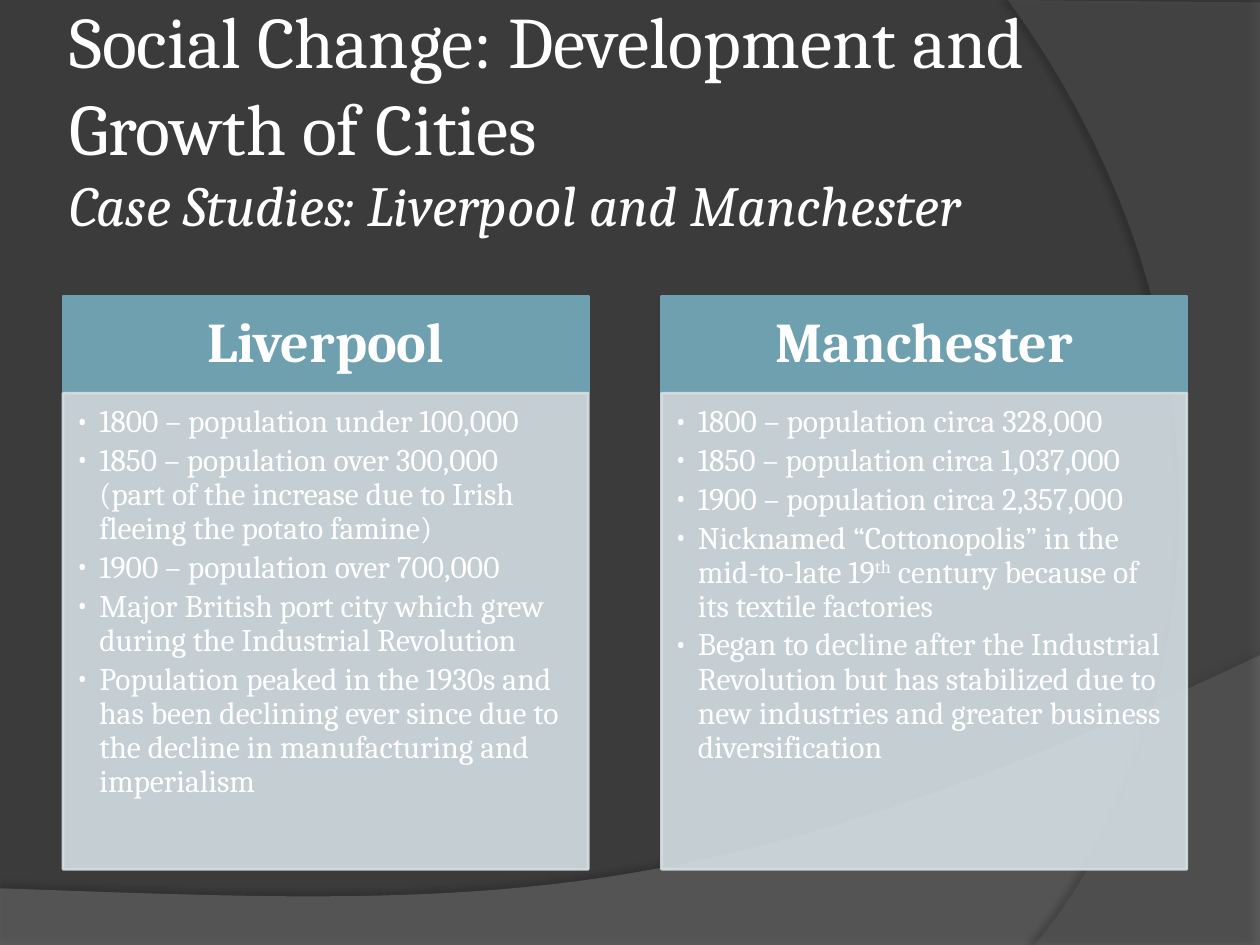
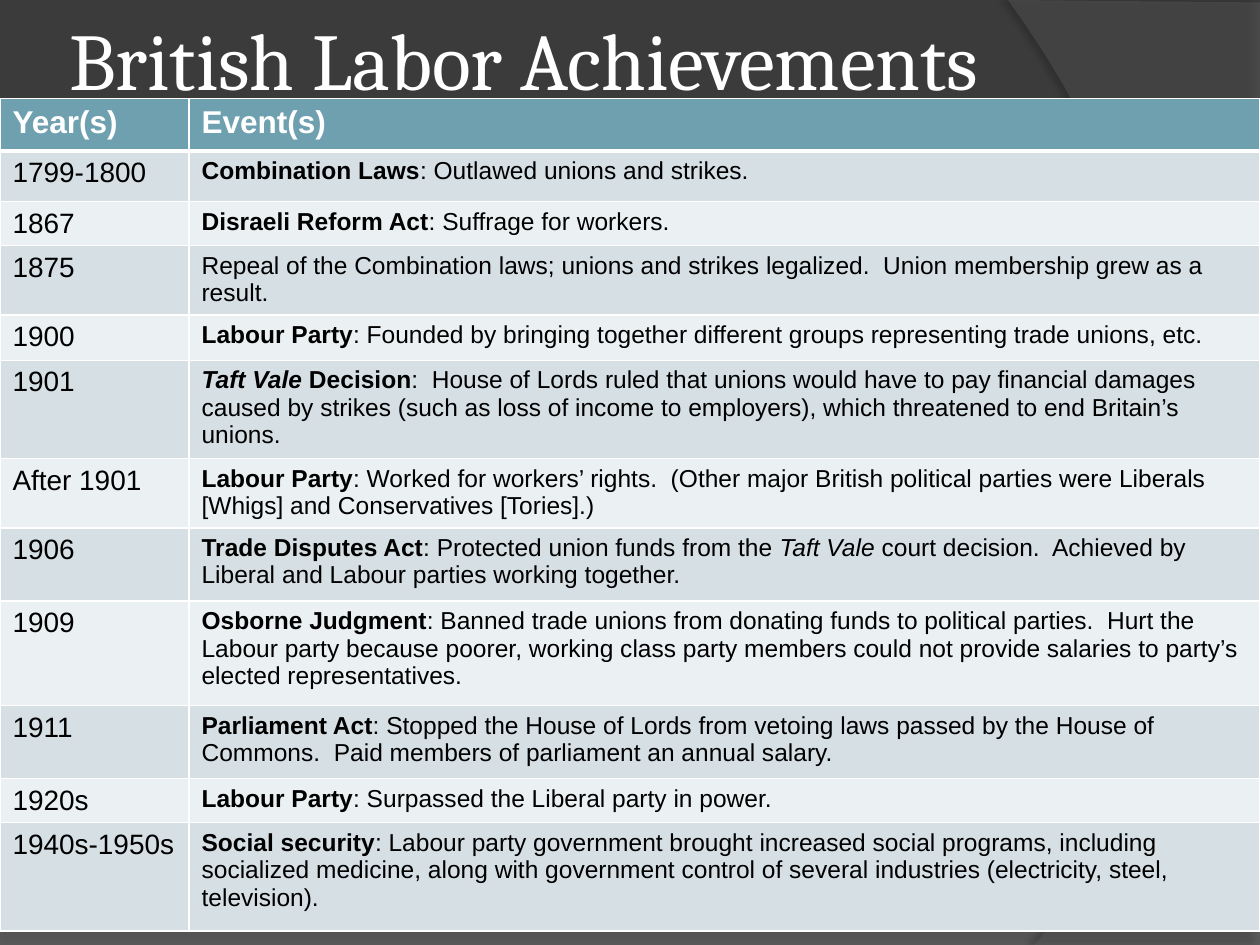
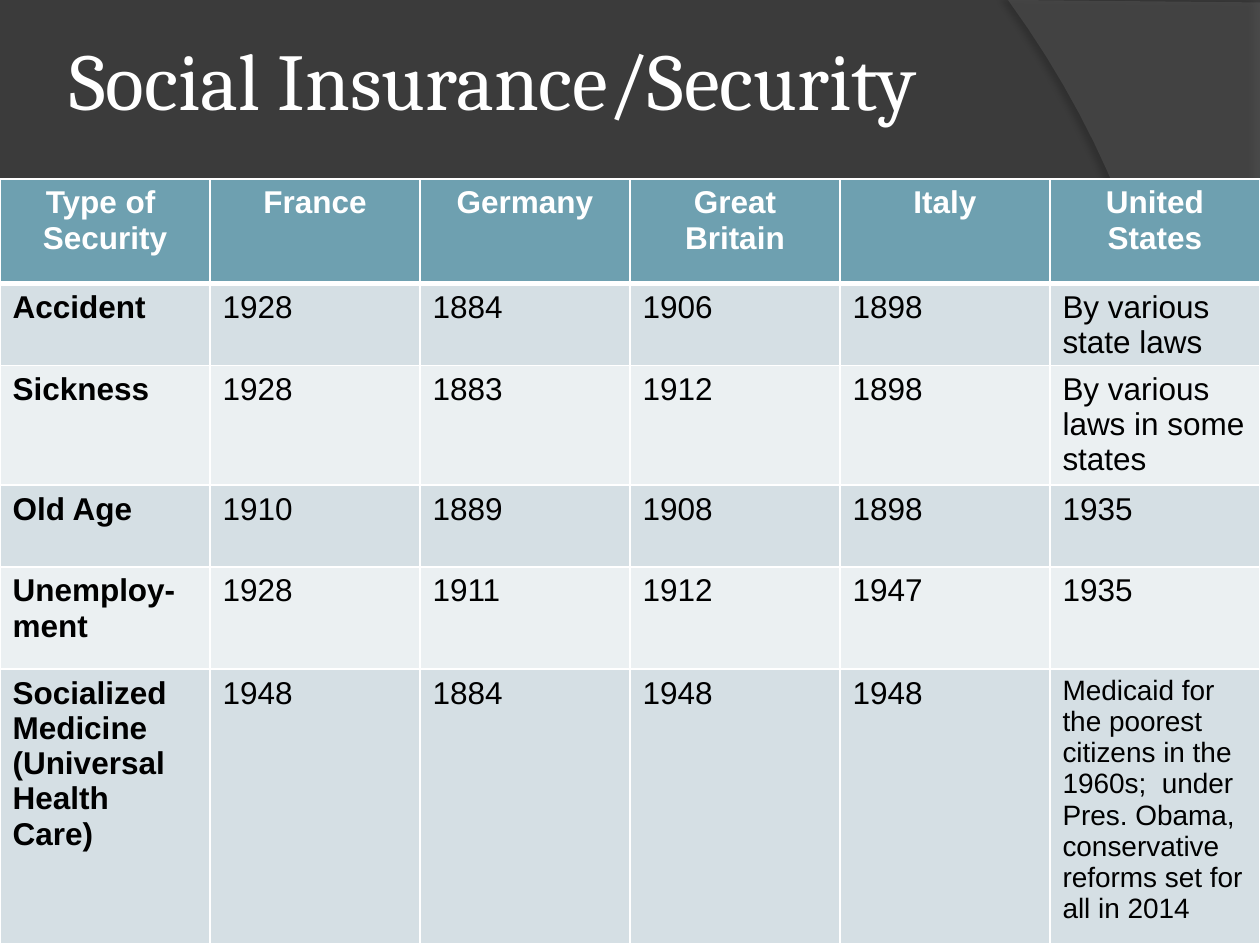
from lxml.etree import SubElement
from pptx import Presentation
from pptx.dml.color import RGBColor
from pptx.enum.shapes import MSO_SHAPE
from pptx.enum.text import MSO_ANCHOR, PP_ALIGN
from pptx.oxml.ns import qn
from pptx.util import Inches, Pt

BACKGROUND, WHITE, BLACK = "3B3B3B", "FFFFFF", "000000"
ACCENT, BAND, BAND_LIGHT = "6EA0B0", "D5DFE4", "EBF0F2"
TITLE = {"name": "Cambria", "size": Pt(46), "color": WHITE}
CARD_HEAD = {"name": "Cambria", "size": Pt(32), "color": WHITE, "bold": True}
CARD_BODY = {"name": "Cambria", "size": Pt(18), "color": WHITE}
HEADER = {"name": "Arial", "size": Pt(18), "color": WHITE, "bold": True}
CELL = {"name": "Arial", "size": Pt(18), "color": BLACK, "bold": False}
BOLD, ITALIC = {"bold": True}, {"italic": True}
LINE_BREAK = ("\n", {})
MARGINS = ("margin_left", "margin_top", "margin_right", "margin_bottom")

# Each sweep: start, segments (one point is a line, three are a curve),
# fill, fill opacity, shadow opacity, shadow distance, shadow angle
SWEEPS = [
    ((0, 7.05),
     [[(0, 7.51)], [(10, 7.51)], [(10, 5.2)], [(5.59, 7.29), (3.91, 7.19), (0, 7.05)]],
     "7F7F7F", 45, 35, 3.5, 270),
    ((10, 0.02),
     [[(10, 7.5)], [(8.21, 7.5)], [(9.35, 6.19), (10.18, 3), (8, 0)], [(10, 0.02)]],
     "5E5E5E", 40, 45, 4, 180),
]

CITIES = {
    "Liverpool": [
        "1800 – population under 100,000",
        "1850 – population over 300,000 (part of the increase due to Irish fleeing the potato famine)",
        "1900 – population over 700,000",
        "Major British port city which grew during the Industrial Revolution",
        "Population peaked in the 1930s and has been declining ever since due to the decline in "
        "manufacturing and imperialism",
    ],
    "Manchester": [
        "1800 – population circa 328,000",
        "1850 – population circa 1,037,000",
        "1900 – population circa 2,357,000",
        [("Nicknamed “Cottonopolis” in the mid-to-late 19", {}), ("th", {"baseline": 30}),
         (" century because of its textile factories", {})],
        "Began to decline after the Industrial Revolution but has stabilized due to new industries "
        "and greater business diversification",
    ],
}

# Year, named act in bold, what it did
LABOR = [
    ("1799-1800", "Combination Laws", ": Outlawed unions and strikes."),
    ("1867", "Disraeli Reform Act", ": Suffrage for workers."),
    ("1875", "", "Repeal of the Combination laws; unions and strikes legalized.  Union membership "
     "grew as a result."),
    ("1900", "Labour Party", ": Founded by bringing together different groups representing trade "
     "unions, etc."),
    ("1901", "Taft Vale Decision", ":  House of Lords ruled that unions would have to pay financial "
     "damages caused by strikes (such as loss of income to employers), which threatened to end "
     "Britain’s unions."),
    ("After 1901", "Labour Party", ": Worked for workers’ rights.  (Other major British political "
     "parties were Liberals [Whigs] and Conservatives [Tories].)"),
    ("1906", "Trade Disputes Act", ": Protected union funds from the Taft Vale court decision.  "
     "Achieved by Liberal and Labour parties working together."),
    ("1909", "Osborne Judgment", ": Banned trade unions from donating funds to political parties.  "
     "Hurt the Labour party because poorer, working class party members could not provide salaries "
     "to party’s elected representatives."),
    ("1911", "Parliament Act", ": Stopped the House of Lords from vetoing laws passed by the House "
     "of Commons.  Paid members of parliament an annual salary."),
    ("1920s", "Labour Party", ": Surpassed the Liberal party in power."),
    ("1940s-1950s", "Social security", ": Labour party government brought increased social "
     "programs, including socialized medicine, along with government control of several industries "
     "(electricity, steel, television)."),
]
LABOR_HEIGHTS = [0.42, 0.4, 0.35, 0.55, 0.36, 0.78, 0.55, 0.58, 0.83, 0.58, 0.35, 0.86]

INSURANCE_HEADER = ["Type of  Security", "France", "Germany", "Great Britain", "Italy",
                    "United States"]
INSURANCE = [
    ("Accident", "1928", "1884", "1906", "1898", "By various state laws"),
    ("Sickness", "1928", "1883", "1912", "1898", "By various laws in some states"),
    ("Old Age", "1910", "1889", "1908", "1898", "1935"),
    ("Unemploy-ment", "1928", "1911", "1912", "1947", "1935"),
    ("Socialized Medicine (Universal Health Care)", "1948", "1884", "1948", "1948",
     [("Medicaid for the poorest citizens in the 1960s;  under Pres. Obama, conservative reforms "
       "set for all in 2014", {"size": Pt(16)})]),
]
INSURANCE_HEIGHTS = [0.83, 0.65, 0.94, 0.65, 0.81, 2.09]


def rgb(color):
    return RGBColor.from_string(color)


def add_runs(p, content, base):
    """Fill a paragraph from a string or from (text, format changes) pairs."""
    for text, changes in [(content, {})] if isinstance(content, str) else content:
        if text == "\n":
            p.add_line_break()
            continue
        r = p.add_run()
        r.text = text
        for name, value in {**base, **changes}.items():
            if name == "color":
                r.font.color.rgb = rgb(value)
            elif name == "baseline":
                r.font._element.set("baseline", str(value * 1000))
            else:
                setattr(r.font, name, value)


def set_frame(tf, anchor, margins):
    tf.word_wrap = True
    tf.vertical_anchor = anchor
    for name, value in zip(MARGINS, margins):
        setattr(tf, name, Inches(value))


def set_opacity(sp, percent):
    for clr in sp._element.spPr.iter(qn("a:srgbClr")):
        SubElement(clr, qn("a:alpha")).set("val", str(percent * 1000))


def add_shadow(sp, opacity, distance, angle):
    effects = sp._element.spPr.find(qn("a:effectLst"))
    shadow = SubElement(effects, qn("a:outerShdw"), blurRad=str(Pt(4)), dist=str(Pt(distance)),
                        dir=str(angle * 60000), algn="ctr", rotWithShape="0")
    clr = SubElement(shadow, qn("a:srgbClr"), val=BLACK)
    SubElement(clr, qn("a:alpha"), val=str(opacity * 1000))


def trace(start, segments, steps=40):
    """Return the outline's points, with each Bézier curve cut into short lines."""
    points = [start]
    for segment in segments:
        if len(segment) == 1:
            points += segment
            continue
        controls = [points[-1], *segment]
        for t in (n / steps for n in range(1, steps + 1)):
            weights = ((1 - t) ** 3, 3 * t * (1 - t) ** 2, 3 * t * t * (1 - t), t ** 3)
            points.append(tuple(sum(w * c[axis] for w, c in zip(weights, controls))
                                for axis in (0, 1)))
    return [(Inches(x), Inches(y)) for x, y in points]


def add_sweep(s, start, segments, color, opacity, shadow_opacity, distance, angle):
    first, *rest = trace(start, segments)
    builder = s.shapes.build_freeform(*first)
    builder.add_line_segments(rest, close=True)
    sp = builder.convert_to_shape()
    sp.shadow.inherit = False
    sp.fill.solid()
    sp.fill.fore_color.rgb = rgb(color)
    sp.line.fill.background()
    set_opacity(sp, opacity)
    add_shadow(sp, shadow_opacity, distance, angle)


def add_slide(prs, title, top, height):
    s = prs.slides.add_slide(prs.slide_layouts[6])
    for sweep in SWEEPS:
        add_sweep(s, *sweep)
    tf = s.shapes.add_textbox(Inches(0.5), Inches(top), Inches(8.17), Inches(height)).text_frame
    set_frame(tf, MSO_ANCHOR.MIDDLE, [0.05] * 4)
    add_runs(tf.paragraphs[0], title, TITLE)
    return s


def add_panel(s, left, top, height, color):
    sp = s.shapes.add_shape(MSO_SHAPE.RECTANGLE, Inches(left), Inches(top), Inches(4.17),
                            Inches(height))
    sp.shadow.inherit = False
    sp.fill.solid()
    sp.fill.fore_color.rgb = sp.line.color.rgb = rgb(color)
    sp.line.width = Pt(1.5)
    return sp


def add_bullet(p, content):
    p.alignment = PP_ALIGN.LEFT
    p.line_spacing = 0.9
    p.space_after = Pt(2.7)
    pPr = p._p.get_or_add_pPr()
    pPr.set("marL", str(Inches(0.19)))
    pPr.set("indent", str(-Inches(0.19)))
    SubElement(pPr, qn("a:buFont"), typeface=CARD_BODY["name"])
    SubElement(pPr, qn("a:buChar"), char="•")
    add_runs(p, content, CARD_BODY)


def add_city_card(s, left, city, facts):
    tf = add_panel(s, left, 2.35, 0.77, ACCENT).text_frame
    set_frame(tf, MSO_ANCHOR.MIDDLE, (0.25, 0.14, 0.25, 0.14))
    p = tf.paragraphs[0]
    p.alignment = PP_ALIGN.CENTER
    p.line_spacing = 0.9
    add_runs(p, city, CARD_HEAD)

    body = add_panel(s, left, 3.12, 3.78, BAND)
    set_opacity(body, 90)
    tf = body.text_frame
    set_frame(tf, MSO_ANCHOR.TOP, (0.1, 0.1, 0.14, 0.16))
    for i, fact in enumerate(facts):
        add_bullet(tf.add_paragraph() if i else tf.paragraphs[0], fact)


def set_borders(cell, row):
    """Draw white cell borders, thicker between the header and the first row."""
    widths = {"L": 1, "R": 1, "T": 3 if row == 1 else 1, "B": 3 if row == 0 else 1}
    tcPr = cell._tc.get_or_add_tcPr()
    for i, (side, width) in enumerate(widths.items()):
        ln = SubElement(tcPr, qn(f"a:ln{side}"), w=str(Pt(width)))
        SubElement(SubElement(ln, qn("a:solidFill")), qn("a:srgbClr"), val=WHITE)
        tcPr.insert(i, ln)


def add_grid(s, top, widths, heights, rows, formats, header_align):
    """Add a banded table; formats holds the body text format of each column."""
    table = s.shapes.add_table(len(rows), len(widths), 0, Inches(top), Inches(sum(widths)),
                               Inches(sum(heights))).table
    for column, width in zip(table.columns, widths):
        column.width = Inches(width)
    for i, (row, height) in enumerate(zip(rows, heights)):
        table.rows[i].height = Inches(height)
        for j, content in enumerate(row):
            cell = table.cell(i, j)
            cell.margin_bottom = 0
            cell.fill.solid()
            cell.fill.fore_color.rgb = rgb((BAND if i % 2 else BAND_LIGHT) if i else ACCENT)
            set_borders(cell, i)
            p = cell.text_frame.paragraphs[0]
            p.alignment = PP_ALIGN.LEFT if i else header_align
            add_runs(p, content, formats[j] if i else HEADER)


def event_runs(act, effect):
    """Set the act in bold and the case name Taft Vale in italics."""
    runs = []
    for text, fmt in ((act, BOLD), (effect, {})):
        before, case, after = text.partition("Taft Vale")
        runs += [(before, fmt), (case, {**fmt, **ITALIC}), (after, fmt)]
    return [run for run in runs if run[0]]


def build_cities(prs):
    title = [("Social Change: Development and Growth of Cities", {"size": Pt(41.4)}),
             LINE_BREAK,
             ("Case Studies: Liverpool and Manchester", {"size": Pt(32.4), **ITALIC})]
    s = add_slide(prs, title, 0.3, 1.25)
    for i, (city, facts) in enumerate(CITIES.items()):
        add_city_card(s, 0.5 + 4.75 * i, city, facts)


def build_labor(prs):
    s = add_slide(prs, "British Labor Achievements", 0, 0.92)
    rows = [("Year(s)", "Event(s)")]
    rows += [(year, event_runs(act, effect)) for year, act, effect in LABOR]
    formats = [{**CELL, "size": Pt(16)}, {**CELL, "size": Pt(14)}]
    add_grid(s, 0.78, [1.5, 8.5], LABOR_HEIGHTS, rows, formats, PP_ALIGN.LEFT)


def build_insurance(prs):
    s = add_slide(prs, "Social Insurance/Security", 0, 1.25)
    formats = [{**CELL, **BOLD}] + [CELL] * 5
    add_grid(s, 1.42, [10 / 6] * 6, INSURANCE_HEIGHTS, [INSURANCE_HEADER, *INSURANCE], formats,
             PP_ALIGN.CENTER)


def main():
    prs = Presentation()
    prs.slide_width, prs.slide_height = Inches(10), Inches(7.5)
    fill = prs.slide_master.background.fill
    fill.solid()
    fill.fore_color.rgb = rgb(BACKGROUND)
    build_cities(prs)
    build_labor(prs)
    build_insurance(prs)
    prs.save("out.pptx")


if __name__ == "__main__":
    main()
